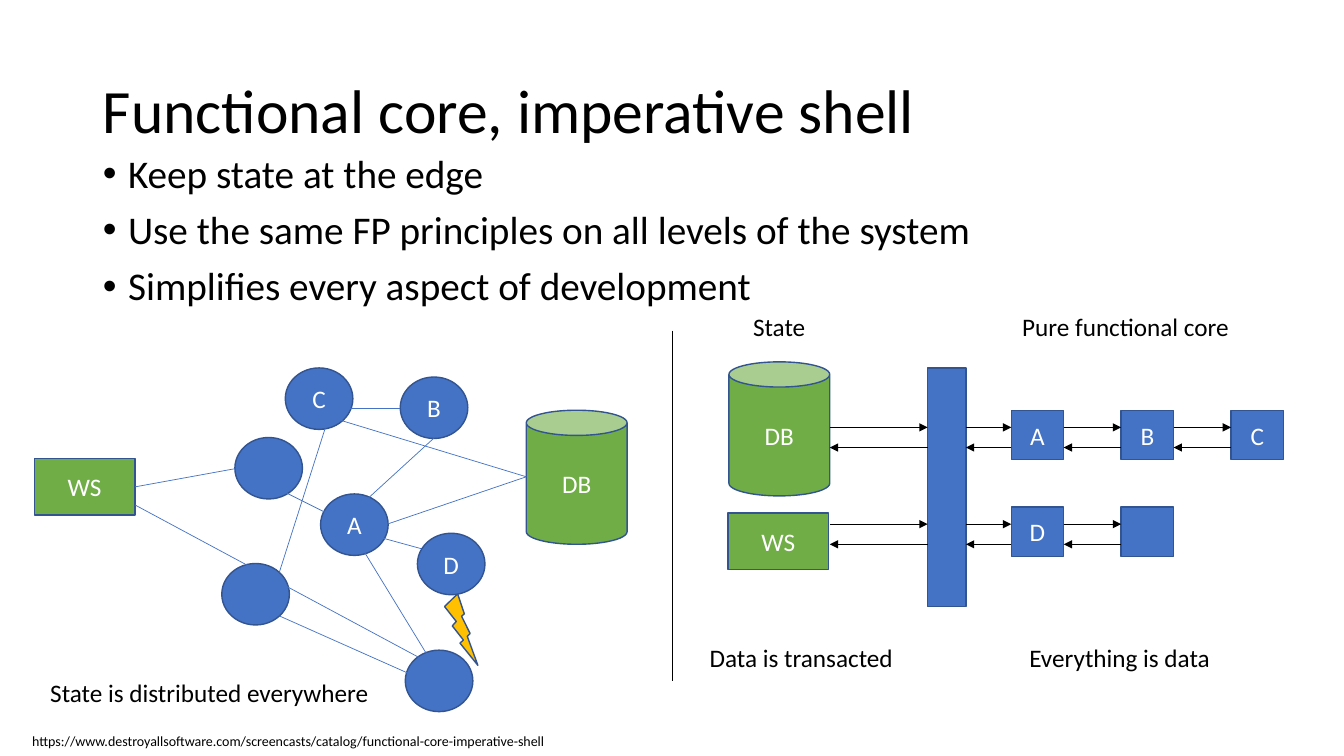
from dataclasses import dataclass

from lxml import etree
from pptx import Presentation
from pptx import util as u
from pptx.dml.color import RGBColor
from pptx.enum import shapes, text
from pptx.oxml.ns import qn


@dataclass(frozen=True)
class Theme:
    font: str = "Calibri"
    ink: str = "000000"
    light: str = "FFFFFF"
    service: str = "4472C4"
    state: str = "70AD47"
    failure: str = "FFC000"
    outline: str = "325491"
    title: int = 44
    body: int = 28
    label: int = 18
    source: int = 10
    thin: float = 0.5


def write(paragraph, words, *, theme, size, color, align=text.PP_ALIGN.LEFT,
          spacing=None, before=0):
    paragraph.alignment = align
    paragraph.space_before = u.Pt(before)
    if spacing:
        paragraph.line_spacing = spacing
    run = paragraph.add_run()
    run.text = words
    run.font.name = theme.font
    run.font.size = u.Pt(size)
    run.font.color.rgb = RGBColor.from_string(color)


class Board:
    """Draws the parts of one slide in one style."""

    def __init__(self, slide, theme):
        self.slide = slide
        self.theme = theme

    def place(self, holder, box, anchor):
        holder.left, holder.top, holder.width, holder.height = map(u.Inches, box)
        frame = holder.text_frame
        frame.auto_size = text.MSO_AUTO_SIZE.NONE
        frame.vertical_anchor = anchor
        return frame

    def title(self, words, box):
        frame = self.place(self.slide.shapes.title, box, text.MSO_ANCHOR.MIDDLE)
        write(frame.paragraphs[0], words, theme=self.theme, size=self.theme.title,
              color=self.theme.ink, spacing=0.9)

    def bullets(self, points, box):
        frame = self.place(self.slide.placeholders[1], box, text.MSO_ANCHOR.TOP)
        for i, point in enumerate(points):
            paragraph = frame.add_paragraph() if i else frame.paragraphs[0]
            props = paragraph._p.get_or_add_pPr()
            props.set("marL", str(u.Inches(0.25)))
            props.set("indent", str(u.Inches(-0.25)))
            etree.SubElement(props, qn("a:buFont")).set("typeface", "Arial")
            etree.SubElement(props, qn("a:buChar")).set("char", "•")
            write(paragraph, point, theme=self.theme, size=self.theme.body,
                  color=self.theme.ink, spacing=0.9, before=10 if i else 0)

    def shape(self, kind, box, fill, words=""):
        part = self.slide.shapes.add_shape(kind, *map(u.Inches, box))
        part.shadow.inherit = False
        part.fill.solid()
        part.fill.fore_color.rgb = RGBColor.from_string(fill)
        part.line.color.rgb = RGBColor.from_string(self.theme.outline)
        part.line.width = u.Pt(1)
        if words:
            part.text_frame.vertical_anchor = text.MSO_ANCHOR.MIDDLE
            write(part.text_frame.paragraphs[0], words, theme=self.theme,
                  size=self.theme.label, color=self.theme.light,
                  align=text.PP_ALIGN.CENTER)

    def node(self, left, top, words=""):
        self.shape(shapes.MSO_SHAPE.OVAL, (left, top, 0.67, 0.61),
                   self.theme.service, words)

    def database(self, left, top):
        self.shape(shapes.MSO_SHAPE.CAN, (left, top, 1, 1.33), self.theme.state, "DB")

    def web_service(self, left, top):
        self.shape(shapes.MSO_SHAPE.RECTANGLE, (left, top, 1, 0.56),
                   self.theme.state, "WS")

    def line(self, x1, y1, x2, y2, color, arrow=False):
        link = self.slide.shapes.add_connector(
            shapes.MSO_CONNECTOR.STRAIGHT, *map(u.Inches, (x1, y1, x2, y2)))
        link.line.color.rgb = RGBColor.from_string(color)
        link.line.width = u.Pt(self.theme.thin)
        if arrow:
            tail = etree.SubElement(link.line._get_or_add_ln(), qn("a:tailEnd"))
            tail.set("type", "triangle")
        etree.SubElement(link._element.spPr, qn("a:effectLst"))

    def label(self, words, box, size, wrap=False):
        frame = self.slide.shapes.add_textbox(*map(u.Inches, box)).text_frame
        frame.word_wrap = wrap
        frame.auto_size = text.MSO_AUTO_SIZE.SHAPE_TO_FIT_TEXT
        write(frame.paragraphs[0], words, theme=self.theme, size=size,
              color=self.theme.ink)


def main():
    theme = Theme()
    deck = Presentation()
    deck.slide_width, deck.slide_height = u.Inches(13.33), u.Inches(7.5)
    board = Board(deck.slides.add_slide(deck.slide_layouts[1]), theme)

    # Title and principles
    board.title("Functional core, imperative shell", (0.92, 0.4, 11.5, 1.45))
    board.bullets(["Keep state at the edge",
                   "Use the same FP principles on all levels of the system",
                   "Simplifies every aspect of development"],
                  (0.92, 1.48, 11.5, 5.27))

    # Left: services tangled with state
    for left, top, name in [(2.33, 4.34, ""), (3.18, 4.9, "A"), (2.83, 3.65, "C"),
                            (2.2, 5.59, ""), (3.97, 3.74, "B")]:
        board.node(left, top, name)
    board.shape(shapes.MSO_SHAPE.LIGHTNING_BOLT, (4.41, 5.89, 0.33, 0.71),
                theme.failure)
    board.node(4.02, 6.45)
    board.database(5.22, 4.07)
    board.web_service(0.34, 4.55)
    for ends in [(3.28, 4.05, 3.97, 4.05), (4.3, 4.35, 3.6, 4.99),
                 (3.62, 5.29, 4.42, 5.51), (4.3, 6.6, 3.5, 5.29),
                 (4.23, 6.76, 2.77, 6.11), (3.42, 5.18, 2.72, 4.83),
                 (3.26, 4.14, 2.77, 5.68), (3.84, 5.2, 5.22, 4.73),
                 (3.28, 4.14, 5.22, 4.73), (1.34, 4.83, 2.33, 4.65),
                 (1.34, 5.01, 4.3, 6.6)]:
        board.line(*ends, theme.service)
    board.node(4.14, 5.29, "D")

    # Divider between the two designs
    board.line(6.67, 3.28, 6.67, 6.76, theme.ink)

    # Right: state, shell and pure core
    board.database(7.23, 3.59)
    board.web_service(7.22, 5.09)
    board.shape(shapes.MSO_SHAPE.RECTANGLE, (9.2, 3.65, 0.38, 2.37), theme.service)
    core_left, core_step, core_width = 10.03, 1.09, 0.52
    for top, names in [(4.07, ["A", "B", "C"]), (5.03, ["D", ""])]:
        gaps = [(8.23, 9.2), (9.58, core_left)]
        for i, name in enumerate(names):
            left = core_left + i * core_step
            board.shape(shapes.MSO_SHAPE.RECTANGLE, (left, top, core_width, 0.49),
                        theme.service, name)
            if i:
                gaps.append((left - core_step + core_width, left))
        for start, end in gaps:
            board.line(start, top + 0.17, end, top + 0.17, theme.ink, arrow=True)
            board.line(end, top + 0.37, start, top + 0.37, theme.ink, arrow=True)

    # Labels and source
    for words, left, top, width in [
            ("Pure functional core", 10.04, 3.04, 2.28),
            ("State", 7.37, 3.04, 0.72),
            ("Everything is data", 10.11, 6.32, 2.01),
            ("Data is transacted", 6.94, 6.32, 2.04),
            ("State is distributed everywhere", 0.4, 6.67, 3.4)]:
        board.label(words, (left, top, width, 0.4), theme.label)
    board.label("https://www.destroyallsoftware.com/screencasts/catalog/"
                "functional-core-imperative-shell",
                (0.22, 7.22, 10.62, 0.27), theme.source, wrap=True)

    deck.save("out.pptx")


if __name__ == "__main__":
    main()
